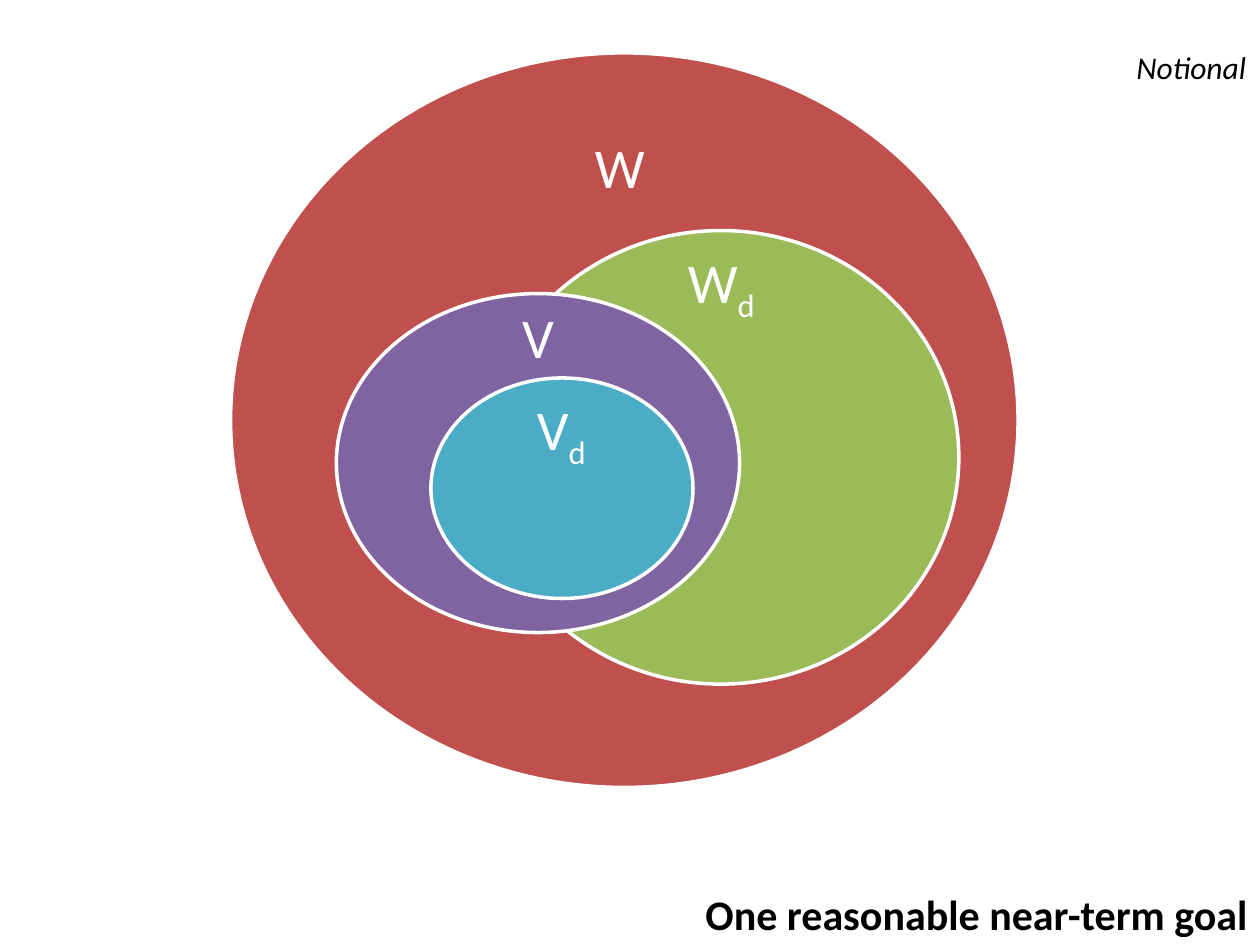
from pptx import Presentation
from pptx.dml.color import RGBColor
from pptx.enum.shapes import MSO_SHAPE
from pptx.enum.text import MSO_ANCHOR, PP_ALIGN
from pptx.util import Inches, Pt

WHITE = RGBColor(0xFF, 0xFF, 0xFF)
BLACK = RGBColor(0x00, 0x00, 0x00)
RED = RGBColor(0xC0, 0x50, 0x4D)
GREEN = RGBColor(0x9B, 0xBB, 0x59)
PURPLE = RGBColor(0x80, 0x64, 0xA2)
TEAL = RGBColor(0x4B, 0xAC, 0xC6)

MID, TOP = MSO_ANCHOR.MIDDLE, MSO_ANCHOR.TOP
WIDE, NARROW = (0.14, 0.14), (0.1, 0.05)  # side and top/bottom insets

# Sets, back to front: colour, ellipse, letter, subscript, label box, anchor, insets
SETS = [
    (RED, (1.83, 0.42, 6.25, 5.83), "W", "", (3.75, 1.06, 2.34, 0.58), MID, WIDE),
    (GREEN, (3.83, 1.83, 3.78, 3.6), "W", "d", (4.91, 2.04, 1.63, 0.41), MID, WIDE),
    (PURPLE, (2.67, 2.33, 3.2, 2.69), "V", "", (3.44, 2.52, 1.66, 0.37), MID, WIDE),
    (TEAL, (3.42, 3, 2.08, 1.75), "V", "d", (4.08, 3.09, 0.75, 0.65), TOP, NARROW),
]

# Notes: text, box, alignment, font
NOTES = [
    ("Notional", (8.92, 0.33, 1.08, 0.4), PP_ALIGN.LEFT,
     {"size": Pt(18), "italic": True}),
    ("One reasonable near-term goal", (4.92, 7, 5.08, 0.5), PP_ALIGN.RIGHT,
     {"size": Pt(24), "bold": True}),
]


def add_run(p, text, color, **fmt):
    r = p.add_run()
    r.text = text
    r.font.color.rgb = color
    for name, value in {"name": "Calibri", **fmt}.items():
        setattr(r.font, name, value)
    return r


def add_box(s, box, align, anchor=TOP, insets=NARROW):
    tf = s.shapes.add_textbox(*map(Inches, box)).text_frame
    side, end = map(Inches, insets)
    for name, value in {"word_wrap": True, "vertical_anchor": anchor,
                        "margin_left": side, "margin_right": side,
                        "margin_top": end, "margin_bottom": end}.items():
        setattr(tf, name, value)
    p = tf.paragraphs[0]
    p.alignment = align
    return p


def add_ellipse(s, box, color):
    sp = s.shapes.add_shape(MSO_SHAPE.OVAL, *map(Inches, box))
    sp.shadow.inherit = False
    sp.fill.solid()
    sp.fill.fore_color.rgb = color
    sp.line.color.rgb = WHITE
    sp.line.width = Pt(2)


def main():
    prs = Presentation()
    prs.slide_width, prs.slide_height = Inches(10), Inches(7.5)
    s = prs.slides.add_slide(prs.slide_layouts[6])

    # Nested sets with their labels
    for color, ellipse, letter, sub, label, anchor, insets in SETS:
        add_ellipse(s, ellipse, color)
        p = add_box(s, label, PP_ALIGN.CENTER, anchor, insets)
        p.line_spacing = 0.9
        add_run(p, letter, WHITE, size=Pt(32))
        if sub:
            r = add_run(p, sub, WHITE, size=Pt(32))
            r.font._element.set("baseline", "-25000")

    # Corner note and closing line
    for text, box, align, fmt in NOTES:
        add_run(add_box(s, box, align), text, BLACK, **fmt)

    prs.save("out.pptx")


if __name__ == "__main__":
    main()
